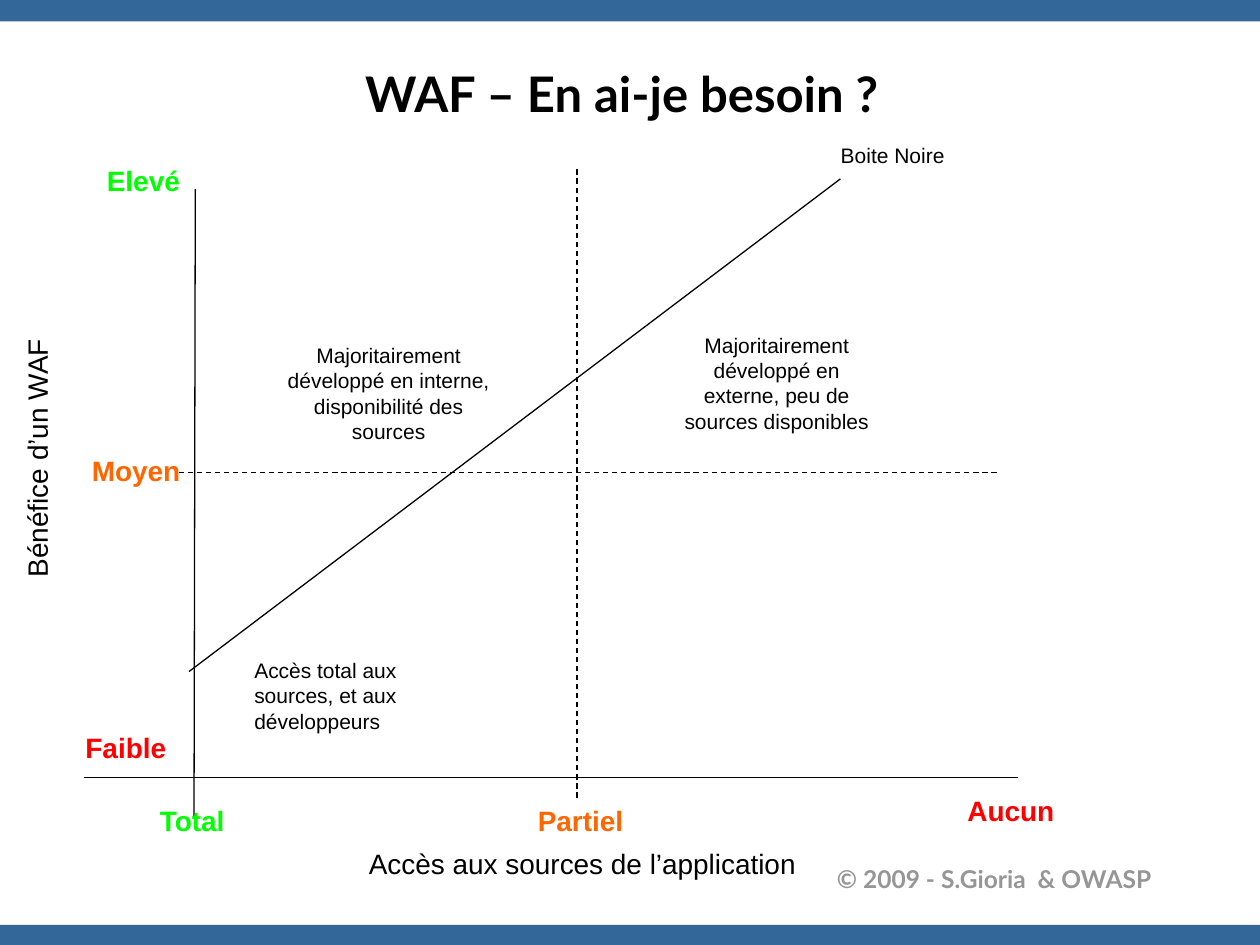
from pptx import Presentation
from pptx.dml.color import RGBColor
from pptx.enum import dml, shapes, text
from pptx.oxml.ns import qn
from pptx.util import Inches, Pt
from lxml import etree

BLACK, BLUE, GREY = "000000", "336699", "969696"
GREEN, ORANGE, RED = "00FF01", "FF6600", "FF0000"
LEFT, MID, RIGHT = text.PP_ALIGN.LEFT, text.PP_ALIGN.CENTER, text.PP_ALIGN.RIGHT


def paint(color, value):
    color.rgb = RGBColor.from_string(value)


def band(slide, top):
    bar = slide.shapes.add_shape(
        shapes.MSO_SHAPE.RECTANGLE, 0, Inches(top), Inches(10), Inches(0.17))
    bar.shadow.inherit = False
    bar.fill.solid()
    paint(bar.fill.fore_color, BLUE)
    bar.line.fill.background()


def line(slide, start, end, dash=False):
    ends = [Inches(n) for n in (*start, *end)]
    rule = slide.shapes.add_connector(shapes.MSO_CONNECTOR.STRAIGHT, *ends)
    paint(rule.line.color, BLACK)
    rule.line.width = Pt(0.75)
    if dash:
        rule.line.dash_style = dml.MSO_LINE.DASH
    etree.SubElement(rule._element.spPr, qn("a:effectLst"))


def label(slide, words, place, size=16, color=BLACK, bold=False,
          align=LEFT, wrap=False, face="Arial"):
    box = slide.shapes.add_textbox(*[Inches(n) for n in place])
    frame = box.text_frame
    frame.text = words
    frame.word_wrap = wrap
    para = frame.paragraphs[0]
    para.alignment = align
    font = para.runs[0].font
    font.name, font.size, font.bold = face, Pt(size), bold
    paint(font.color, color)
    return frame


def inset(frame, left, top, right, low):
    frame.margin_left, frame.margin_top = Inches(left), Inches(top)
    frame.margin_right, frame.margin_bottom = Inches(right), Inches(low)


def frame_page(slide):
    for top in (0, 7.34):
        band(slide, top)
    foot = label(slide, "© 2009 - S.Gioria  & OWASP", (5.33, 6.86, 3.85, 0.35),
                 14, GREY, True, RIGHT, True, "Lato")
    inset(foot, 0, 0, 0.04, 0)
    title = label(slide, "WAF – En ai-je besoin ? ", (0.5, 0.05, 9, 1.37),
                  28, BLACK, True, MID, True, "Lato")
    inset(title, 0.06, 0.06, 0.1, 0.06)
    title.vertical_anchor = text.MSO_ANCHOR.MIDDLE


def draw_axes(slide):
    line(slide, (1.55, 1.5), (1.54, 6.5))
    line(slide, (0.67, 6.17), (8.08, 6.17))
    label(slide, "Accès aux sources de l’application", (2.83, 6.67, 3.63, 0.37))
    side = label(slide, "Bénéfice d’un WAF", (0.11, 2.67, 0.47, 2.01))
    side._txBody.bodyPr.set("vert", "vert270")
    line(slide, (1.42, 3.75), (7.92, 3.75), True)
    line(slide, (4.58, 6.33), (4.58, 1.33), True)


def main():
    deck = Presentation()
    deck.slide_width, deck.slide_height = Inches(10), Inches(7.5)
    slide = deck.slides.add_slide(deck.slide_layouts[6])
    frame_page(slide)
    draw_axes(slide)

    levels = [
        ("Elevé", 0.75, 1.25, 0.79, GREEN),
        ("Aucun", 7.58, 6.25, 0.9, RED),
        ("Total", 1.17, 6.33, 0.72, GREEN),
        ("Partiel", 4.17, 6.33, 0.89, ORANGE),
        ("Moyen", 0.63, 3.55, 0.91, ORANGE),
        ("Faible", 0.58, 5.75, 0.85, RED),
    ]
    for words, left, top, width, color in levels:
        label(slide, words, (left, top, width, 0.37), color=color, bold=True)

    line(slide, (1.5, 5.33), (6.67, 1.42))
    notes = [
        ("Accès total aux sources, et aux développeurs", 1.92, 5.17, 0.71, LEFT),
        ("Majoritairement développé en interne, disponibilité des sources",
         2.17, 2.67, 0.91, MID),
        ("Majoritairement développé en externe, peu de sources disponibles",
         5.25, 2.59, 0.91, MID),
        ("Boite Noire", 6.17, 1.08, 0.3, MID),
    ]
    for words, left, top, height, align in notes:
        label(slide, words, (left, top, 1.83, height), 12, align=align, wrap=True)

    deck.save("out.pptx")


if __name__ == "__main__":
    main()
